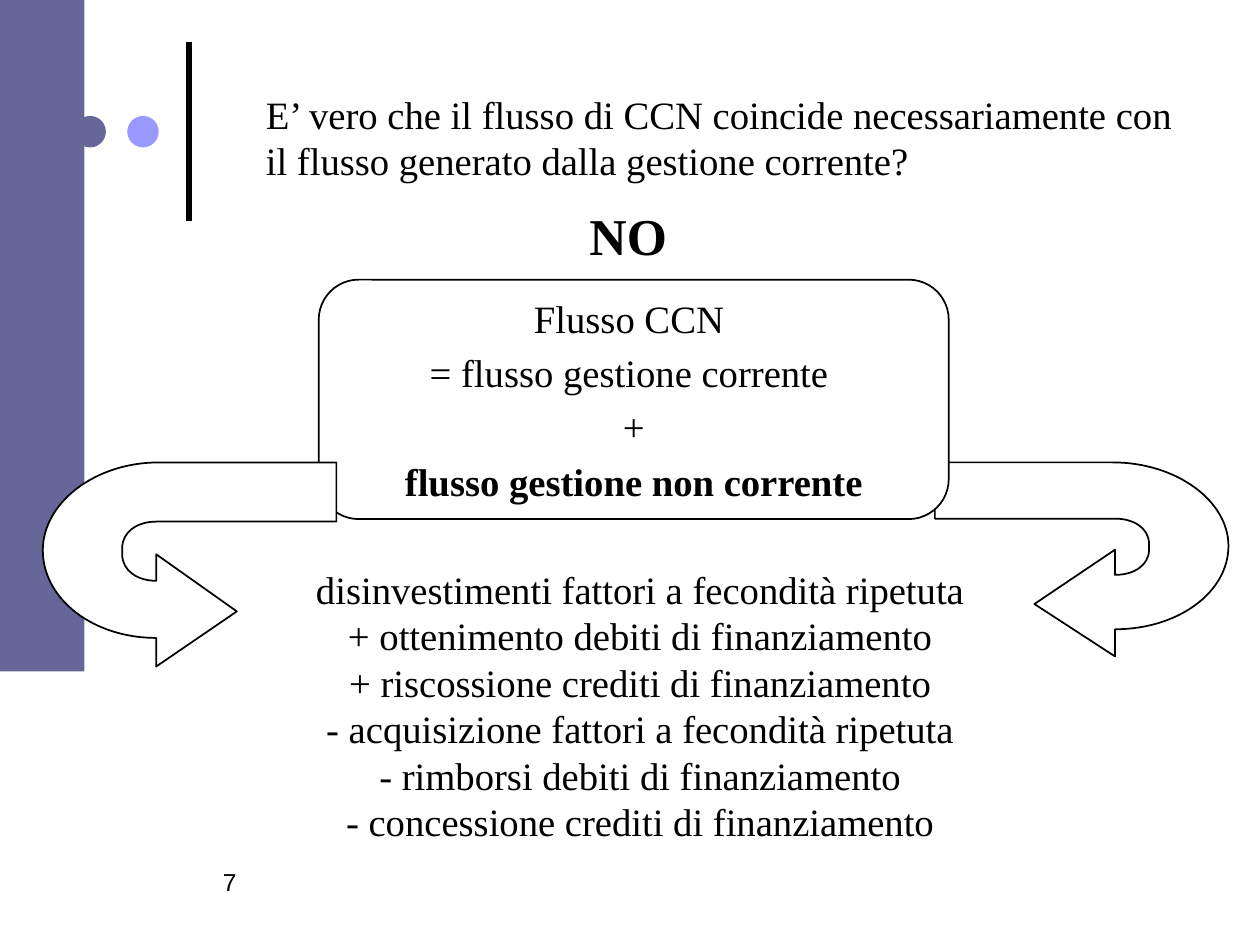
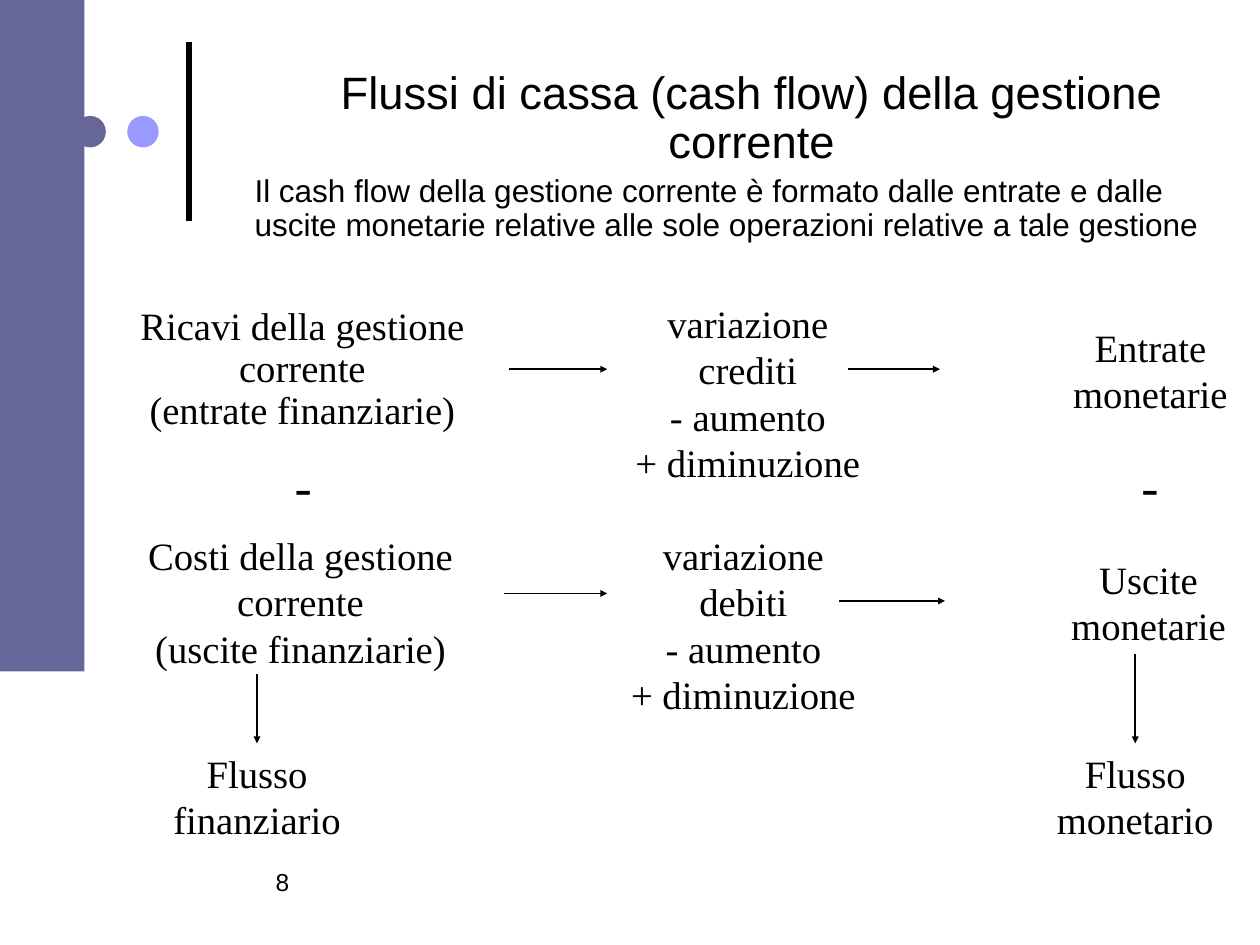
"""Build two slides on working-capital flows and cash flows."""
from dataclasses import dataclass

from lxml import etree
from pptx import Presentation
from pptx.dml.color import RGBColor
from pptx.enum.shapes import MSO_CONNECTOR, MSO_SHAPE
from pptx.enum.text import MSO_ANCHOR, MSO_AUTO_SIZE, PP_ALIGN
from pptx.oxml.ns import qn
from pptx.util import Inches, Pt

LEFT, CENTER = PP_ALIGN.LEFT, PP_ALIGN.CENTER
TOP, MIDDLE = MSO_ANCHOR.TOP, MSO_ANCHOR.MIDDLE
NO_AUTOFIT = MSO_AUTO_SIZE.NONE
STRAIGHT = MSO_CONNECTOR.STRAIGHT
RECTANGLE, OVAL = MSO_SHAPE.RECTANGLE, MSO_SHAPE.OVAL
ROUNDED = MSO_SHAPE.ROUNDED_RECTANGLE
TITLE_ONLY = 5
TOP_SIDE = 0


@dataclass(frozen=True)
class Theme:
    """Colours, fonts and type sizes of the deck."""
    ink: RGBColor = RGBColor(0, 0, 0)
    paper: RGBColor = RGBColor(255, 255, 255)
    band: RGBColor = RGBColor(0x66, 0x66, 0x99)
    accent: RGBColor = RGBColor(0x99, 0x99, 0xFF)
    serif: str = "Times New Roman"
    sans: str = "Arial"
    heading: float = 25.9
    body: float = 22.1
    emphasis: float = 29.5
    note: float = 18
    page: float = 14


THEME = Theme()


def inches(box):
    """Convert a sequence of numbers to lengths."""
    return [Inches(value) for value in box]


def shifted(box, origin):
    """Move a box by the left and top of its region."""
    return (origin[0] + box[0], origin[1] + box[1], *box[2:])


def format_paragraph(paragraph, size=THEME.body, font=THEME.serif, align=CENTER,
                     spacing=1.0, before=0, bold=False, italic=False):
    """Set spacing and type of one paragraph."""
    paragraph.alignment = align
    paragraph.line_spacing = spacing
    paragraph.space_before = Pt(before)
    for run in paragraph.runs:
        run.font.size = Pt(size)
        run.font.name = font
        run.font.bold = bold
        run.font.italic = italic
        run.font.color.rgb = THEME.ink


def write(frame, lines, **style):
    """Fill a text frame with equally formatted paragraphs."""
    frame.text = "\n".join(lines)
    for paragraph in frame.paragraphs:
        format_paragraph(paragraph, **style)


def add_text(slide, box, lines, wrap=True, **style):
    """Add a text box."""
    block = slide.shapes.add_textbox(*inches(box))
    block.text_frame.word_wrap = wrap
    write(block.text_frame, lines, **style)
    return block


def paint(shape, fill=None, outlined=False):
    """Give a shape an optional flat fill and an optional thin outline."""
    shape.shadow.inherit = False
    if fill is None:
        shape.fill.background()
    else:
        shape.fill.solid()
        shape.fill.fore_color.rgb = fill
    if outlined:
        shape.line.color.rgb = THEME.ink
        shape.line.width = Pt(1)
    else:
        shape.line.fill.background()


def add_line(slide, start, end, width=1, arrow=True):
    """Add a straight line, by default with an arrowhead at its end."""
    line = slide.shapes.add_connector(STRAIGHT, *inches((*start, *end)))
    line.line.color.rgb = THEME.ink
    line.line.width = Pt(width)
    if arrow:
        etree.SubElement(line.line._get_or_add_ln(), qn("a:tailEnd"),
                         type="triangle", w="sm", len="sm")
    etree.SubElement(line._element.spPr, qn("a:effectLst"))
    return line


def place_title(slide, box, lines, **style):
    """Move, fill and format the title placeholder."""
    title = slide.shapes.title
    title.left, title.top, title.width, title.height = inches(box)
    frame = title.text_frame
    frame.word_wrap = True
    frame.auto_size = NO_AUTOFIT
    frame.vertical_anchor = TOP
    write(frame, lines, **style)
    return frame


def start_slide(deck, page, page_box):
    """Add a slide with the side band, dots, rule and page number."""
    slide = deck.slides.add_slide(deck.slide_layouts[TITLE_ONLY])
    add_line(slide, (1.5, 1.75), (1.5, 0.33), width=3, arrow=False)
    for kind, box, fill in (
        (OVAL, (0.59, 0.92, 0.25, 0.25), THEME.band),
        (OVAL, (1.01, 0.92, 0.25, 0.25), THEME.accent),
        (RECTANGLE, (0, 0, 0.67, 5.33), THEME.band),
    ):
        paint(slide.shapes.add_shape(kind, *inches(box)), fill)
    add_text(slide, page_box, [page], size=THEME.page, font=THEME.sans, align=LEFT)
    return slide


def merge_curve(segments):
    """Turn three successive line segments into one cubic curve."""
    curve = etree.Element(qn("a:cubicBezTo"))
    segments[0].addprevious(curve)
    for segment in segments:
        curve.append(segment[0])
        segment.getparent().remove(segment)


def add_return_arrow(slide, box, fill=None, mirrored=False):
    """Draw a U-turn arrow in the box, bending right, or left if mirrored."""
    left, top, width, height = box
    outline = [
        (0.79, 0.73), (1.43, 1), (1.43, 0.86),
        (1.93, 0.86), (2.33, 0.67), (2.33, 0.43),
        (2.33, 0.2), (1.92, 0), (1.41, 0),
        (0, 0), (0, 0.29), (1.43, 0.29),
        (1.58, 0.29), (1.7, 0.34), (1.7, 0.42), (1.7, 0.45),
        (1.7, 0.53), (1.58, 0.58), (1.43, 0.58), (1.43, 0.45),
    ]
    points = [(Inches(left + (width - x if mirrored else x)), Inches(top + height * y))
              for x, y in outline]
    builder = slide.shapes.build_freeform(*points[0])
    builder.add_line_segments(points[1:], close=True)
    arrow = builder.convert_to_shape()
    segments = list(arrow._element.iter(qn("a:lnTo")))
    for first in (2, 5, 11, 15):
        merge_curve(segments[first:first + 3])
    paint(arrow, fill, outlined=True)


def add_equation(slide, box):
    """Add the rounded box that splits the CCN flow."""
    equation = slide.shapes.add_shape(ROUNDED, *inches(box))
    equation.adjustments[0] = 0.167
    paint(equation, THEME.paper, outlined=True)
    frame = equation.text_frame
    frame.word_wrap = True
    frame.vertical_anchor = MIDDLE
    frame.margin_left = frame.margin_right = frame.margin_top = frame.margin_bottom = 0
    write(frame, ["Flusso CCN ", "= flusso gestione corrente ", "+",
                  "flusso gestione non corrente"], before=4.4)
    frame.paragraphs[0].space_before = Pt(0)
    frame.paragraphs[-1].runs[0].font.bold = True


def build_ccn_slide(deck):
    """Ask whether the CCN flow equals the current-operations flow."""
    slide = start_slide(deck, "7", (1.67, 6.83, 1.42, 0.5))
    place_title(slide, (2.01, 0.67, 7.58, 0.85),
                ["E’ vero che il flusso di CCN coincide necessariamente con "
                 "il flusso generato dalla gestione corrente?"], align=LEFT)
    add_return_arrow(slide, (7.42, 3.67, 2.33, 1.54))
    add_equation(slide, (2.53, 2.22, 5, 1.9))
    add_text(slide, (4.58, 1.57, 0.82, 0.6), ["NO"], wrap=False,
             size=THEME.emphasis, align=LEFT, bold=True)
    add_text(slide, (1.75, 4.44, 6.66, 2.34), [
        "disinvestimenti fattori a fecondità ripetuta",
        "+ ottenimento debiti di finanziamento",
        "+ riscossione crediti di finanziamento",
        "- acquisizione fattori a fecondità ripetuta",
        "- rimborsi debiti di finanziamento",
        "- concessione crediti di finanziamento",
    ])
    add_return_arrow(slide, (0.33, 3.67, 2.34, 1.62), THEME.paper, mirrored=True)


def add_flow_row(slide, origin, cells, arrows):
    """Add one row of texts and the horizontal arrows between them."""
    for box, lines, spacing in cells:
        add_text(slide, shifted(box, origin), lines, spacing=spacing)
    for start, end, drop in arrows:
        add_line(slide, shifted((start, drop), origin), shifted((end, drop), origin))


def add_outcome(slide, box, label, arrow_top):
    """Add a resulting flow with the arrow that leads down to it."""
    outcome = add_text(slide, box, [label])
    middle = box[0] + box[2] / 2
    arrow = add_line(slide, (middle, arrow_top), (middle, box[1]))
    arrow.end_connect(outcome, TOP_SIDE)


def build_cash_flow_slide(deck):
    """Lead from revenues and costs to the cash flow."""
    slide = start_slide(deck, "8", (2.09, 6.83, 1.24, 0.5))
    heading = place_title(slide, (1.93, 0.52, 8.07, 1.62), [
        "Flussi di cassa (cash flow) della gestione corrente",
        "Il cash flow della gestione corrente è formato dalle entrate e dalle "
        "uscite monetarie relative alle sole operazioni relative a tale gestione",
    ], size=THEME.heading, font=THEME.sans, spacing=0.9, before=5.2)
    heading.margin_left = heading.margin_right = Inches(0.09)
    heading.margin_top = Inches(0.04)
    format_paragraph(heading.paragraphs[1], size=THEME.note, font=THEME.sans,
                     align=LEFT, spacing=0.9, before=3.6)
    changes = ["- aumento", "+ diminuzione"]
    add_flow_row(slide, (0.98, 2.33), [
        ((0, 0.06, 2.84, 1.11), ["Ricavi della gestione corrente", "(entrate finanziarie)"], 0.9),
        ((3.92, 0, 2.07, 1.59), ["variazione crediti", *changes], 1.0),
        ((7.16, 0.19, 1.98, 0.85), ["Entrate monetarie"], 1.0),
    ], [(3.06, 3.84, 0.6), (5.75, 6.48, 0.6)])
    add_flow_row(slide, (0.98, 4.17), [
        ((0, 0, 2.81, 1.22), ["Costi della gestione corrente", "(uscite finanziarie)"], 1.0),
        ((3.92, 0, 2, 1.59), ["variazione debiti", *changes], 1.0),
        ((7.18, 0.19, 1.91, 0.85), ["Uscite monetarie"], 1.0),
    ], [(3.02, 3.84, 0.54), (5.68, 6.52, 0.6)])
    for minus_left in (2.24, 8.96):
        add_text(slide, (minus_left, 3.55, 0.3, 0.6), ["-"],
                 size=THEME.emphasis, align=LEFT, italic=True)
    add_outcome(slide, (1.27, 5.9, 1.54, 0.85), "Flusso finanziario", 5.35)
    add_outcome(slide, (8.24, 5.9, 1.54, 0.85), "Flusso monetario", 5.19)


def main():
    """Build and save the deck."""
    deck = Presentation()
    deck.slide_width, deck.slide_height = Inches(10), Inches(7.5)
    build_ccn_slide(deck)
    build_cash_flow_slide(deck)
    deck.save("out.pptx")


if __name__ == "__main__":
    main()
